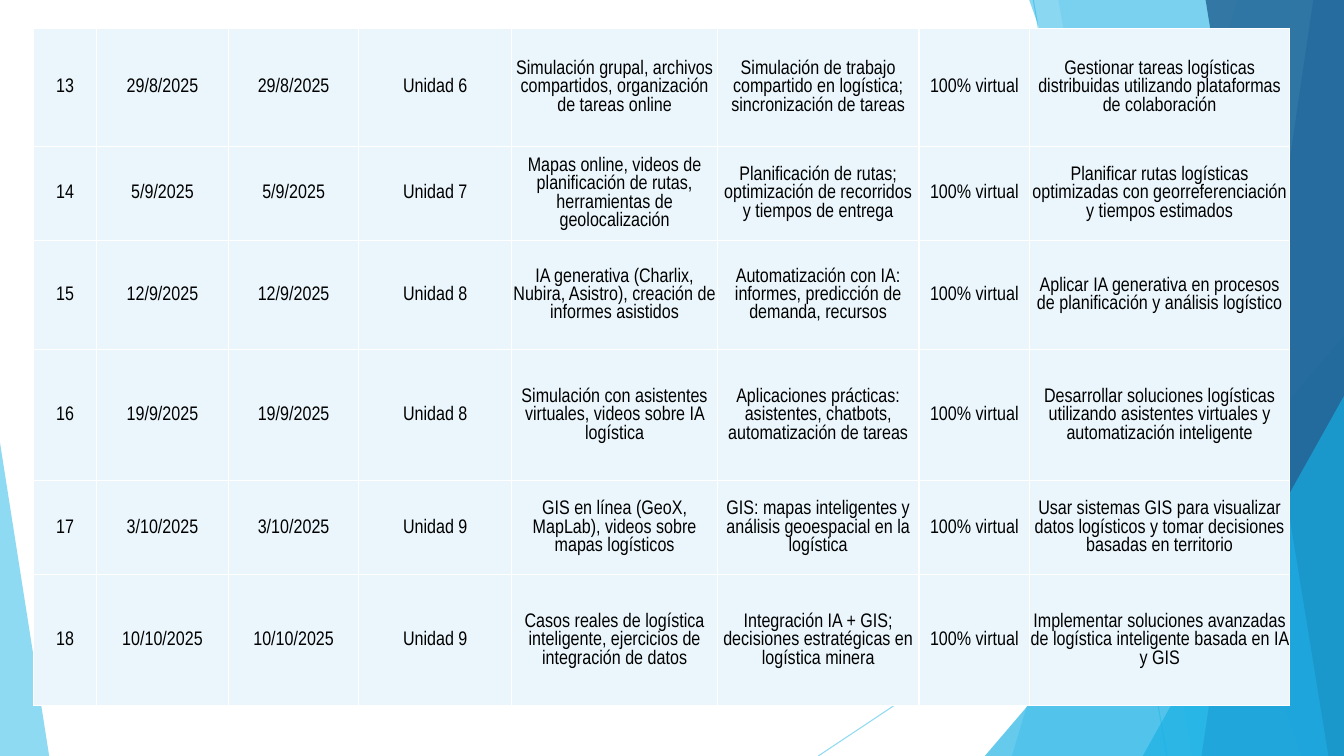
from dataclasses import dataclass

from lxml.etree import SubElement
from pptx import Presentation
from pptx.dml.color import RGBColor
from pptx.enum.shapes import MSO_CONNECTOR, MSO_SHAPE
from pptx.enum.text import MSO_ANCHOR as Anchor, PP_ALIGN as Align
from pptx.oxml.ns import qn
from pptx.shapes.base import BaseShape
from pptx.slide import Slide
from pptx.table import _Cell as Cell
from pptx.util import Cm, Pt


@dataclass(frozen=True)
class Theme:
    sky: str = "5FCBEF"
    cyan: str = "17B0E4"
    blue: str = "2E83C3"
    navy: str = "226292"
    cell: str = "EAF6FC"
    text: str = "000000"
    font: str = "Arial Narrow"
    text_size: float = 14
    line_width: float = 0.75


THEME = Theme()
PAGE_WIDTH, PAGE_HEIGHT = 33.87, 19.05
BLEED = 0.02


@dataclass(frozen=True)
class Ray:
    start: tuple[float, float]
    end: tuple[float, float]


@dataclass(frozen=True)
class Pane:
    top_x: float
    bottom_x: float
    color: str
    opacity: int


@dataclass(frozen=True)
class Peak:
    left: float
    top: float
    width: float
    apex: float
    color: str
    opacity: int


@dataclass(frozen=True)
class Lesson:
    number: int
    date: str
    unit: int
    resources: str
    topic: str
    goal: str
    height: float


BACKDROP: list[Ray | Pane | Peak] = [
    Ray((26.04, 0), (29.41, PAGE_HEIGHT)),
    Ray((PAGE_WIDTH, 10.24), (20.62, PAGE_HEIGHT)),
    Pane(31.19, 25.5, THEME.sky, 36),
    Pane(26.67, 30.05, THEME.sky, 20),
    Peak(24.82, 8.46, 9.05, 1, THEME.cyan, 66),
    Pane(25.93, 32.79, THEME.cyan, 50),
    Pane(33.1, 30.28, THEME.blue, 70),
    Pane(30.38, 33.48, THEME.navy, 80),
    Peak(28.8, 9.98, 5.07, 1, THEME.cyan, 66),
    Peak(0, 11.15, 1.24, 0, THEME.sky, 70),
]

COLUMN_WIDTHS = [1.58, 3.33, 3.28, 3.86, 5.18, 5.08, 2.79, 6.55]
LESSONS = [
    Lesson(13, "29/8/2025", 6,
           "Simulación grupal, archivos compartidos, organización de tareas online",
           "Simulación de trabajo compartido en logística; sincronización de tareas",
           "Gestionar tareas logísticas distribuidas utilizando plataformas de colaboración", 2.98),
    Lesson(14, "5/9/2025", 7,
           "Mapas online, videos de planificación de rutas, herramientas de geolocalización",
           "Planificación de rutas; optimización de recorridos y tiempos de entrega",
           "Planificar rutas logísticas optimizadas con georreferenciación y tiempos estimados", 2.37),
    Lesson(15, "12/9/2025", 8,
           "IA generativa (Charlix, Nubira, Asistro), creación de informes asistidos",
           "Automatización con IA: informes, predicción de demanda, recursos",
           "Aplicar IA generativa en procesos de planificación y análisis logístico", 2.75),
    Lesson(16, "19/9/2025", 8,
           "Simulación con asistentes virtuales, videos sobre IA logística",
           "Aplicaciones prácticas: asistentes, chatbots, automatización de tareas",
           "Desarrollar soluciones logísticas utilizando asistentes virtuales y automatización inteligente", 3.3),
    Lesson(17, "3/10/2025", 9,
           "GIS en línea (GeoX, MapLab), videos sobre mapas logísticos",
           "GIS: mapas inteligentes y análisis geoespacial en la logística",
           "Usar sistemas GIS para visualizar datos logísticos y tomar decisiones basadas en territorio", 2.37),
    Lesson(18, "10/10/2025", 9,
           "Casos reales de logística inteligente, ejercicios de integración de datos",
           "Integración IA + GIS; decisiones estratégicas en logística minera",
           "Implementar soluciones avanzadas de logística inteligente basada en IA y GIS", 3.3),
]


def set_opacity(shape: BaseShape, percent: int) -> None:
    for color in shape.element.spPr.iter(qn("a:srgbClr")):
        SubElement(color, qn("a:alpha"), val=str(percent * 1000))


def paint(shape: BaseShape, color: str, opacity: int) -> None:
    shape.shadow.inherit = False
    shape.fill.solid()
    shape.fill.fore_color.rgb = RGBColor.from_string(color)
    shape.line.fill.background()
    set_opacity(shape, opacity)


def draw_ray(page: Slide, ray: Ray) -> None:
    points = [Cm(value) for value in (*ray.start, *ray.end)]
    line = page.shapes.add_connector(MSO_CONNECTOR.STRAIGHT, *points)
    line.line.color.rgb = RGBColor.from_string(THEME.sky)
    line.line.width = Pt(THEME.line_width)
    set_opacity(line, 70)
    SubElement(line.element.spPr, qn("a:effectLst"))


def draw_pane(page: Slide, pane: Pane) -> None:
    corners = [(PAGE_WIDTH, -BLEED), (PAGE_WIDTH, PAGE_HEIGHT), (pane.bottom_x, PAGE_HEIGHT)]
    builder = page.shapes.build_freeform(Cm(pane.top_x), Cm(-BLEED))
    builder.add_line_segments([(Cm(x), Cm(y)) for x, y in corners], close=True)
    paint(builder.convert_to_shape(), pane.color, pane.opacity)


def draw_peak(page: Slide, peak: Peak) -> None:
    triangle = page.shapes.add_shape(
        MSO_SHAPE.ISOSCELES_TRIANGLE, Cm(peak.left), Cm(peak.top),
        Cm(peak.width), Cm(PAGE_HEIGHT - peak.top))
    triangle.adjustments[0] = peak.apex
    paint(triangle, peak.color, peak.opacity)


def fill_cell(cell: Cell, text: str) -> None:
    cell.fill.solid()
    cell.fill.fore_color.rgb = RGBColor.from_string(THEME.cell)
    cell.vertical_anchor = Anchor.MIDDLE
    cell.margin_left = cell.margin_top = cell.margin_right = Cm(0.02)
    cell.margin_bottom = Cm(0)
    cell.text_frame.text = text
    para = cell.text_frame.paragraphs[0]
    para.alignment = Align.CENTER
    font = para.runs[0].font
    font.name = THEME.font
    font.size = Pt(THEME.text_size)
    font.color.rgb = RGBColor.from_string(THEME.text)


def draw_schedule(page: Slide, lessons: list[Lesson]) -> None:
    frame = page.shapes.add_table(
        len(lessons), len(COLUMN_WIDTHS), Cm(0.85), Cm(0.71),
        Cm(sum(COLUMN_WIDTHS)), Cm(sum(lesson.height for lesson in lessons)))
    table = frame.table
    table.first_row = table.horz_banding = False
    for column, width in zip(table.columns, COLUMN_WIDTHS):
        column.width = Cm(width)
    for row, lesson in zip(table.rows, lessons):
        row.height = Cm(lesson.height)
        texts = [str(lesson.number), lesson.date, lesson.date, f"Unidad {lesson.unit}",
                 lesson.resources, lesson.topic, "100% virtual", lesson.goal]
        for cell, text in zip(row.cells, texts):
            fill_cell(cell, text)


def main() -> None:
    deck = Presentation()
    deck.slide_width, deck.slide_height = Cm(PAGE_WIDTH), Cm(PAGE_HEIGHT)
    page = deck.slides.add_slide(deck.slide_layouts[6])
    painters = {Ray: draw_ray, Pane: draw_pane, Peak: draw_peak}
    for part in BACKDROP:
        painters[type(part)](page, part)
    draw_schedule(page, LESSONS)
    deck.save("out.pptx")


if __name__ == "__main__":
    main()
